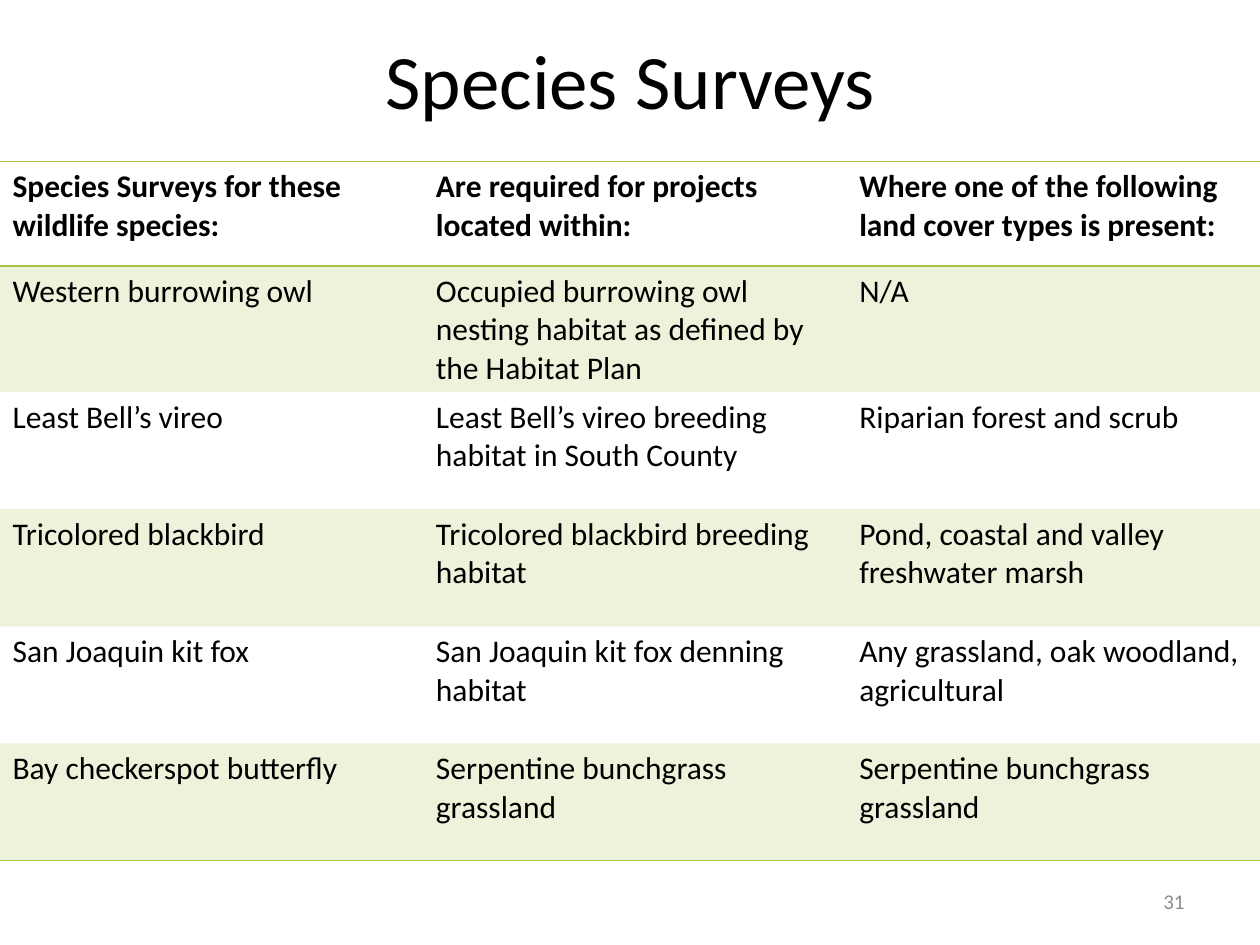
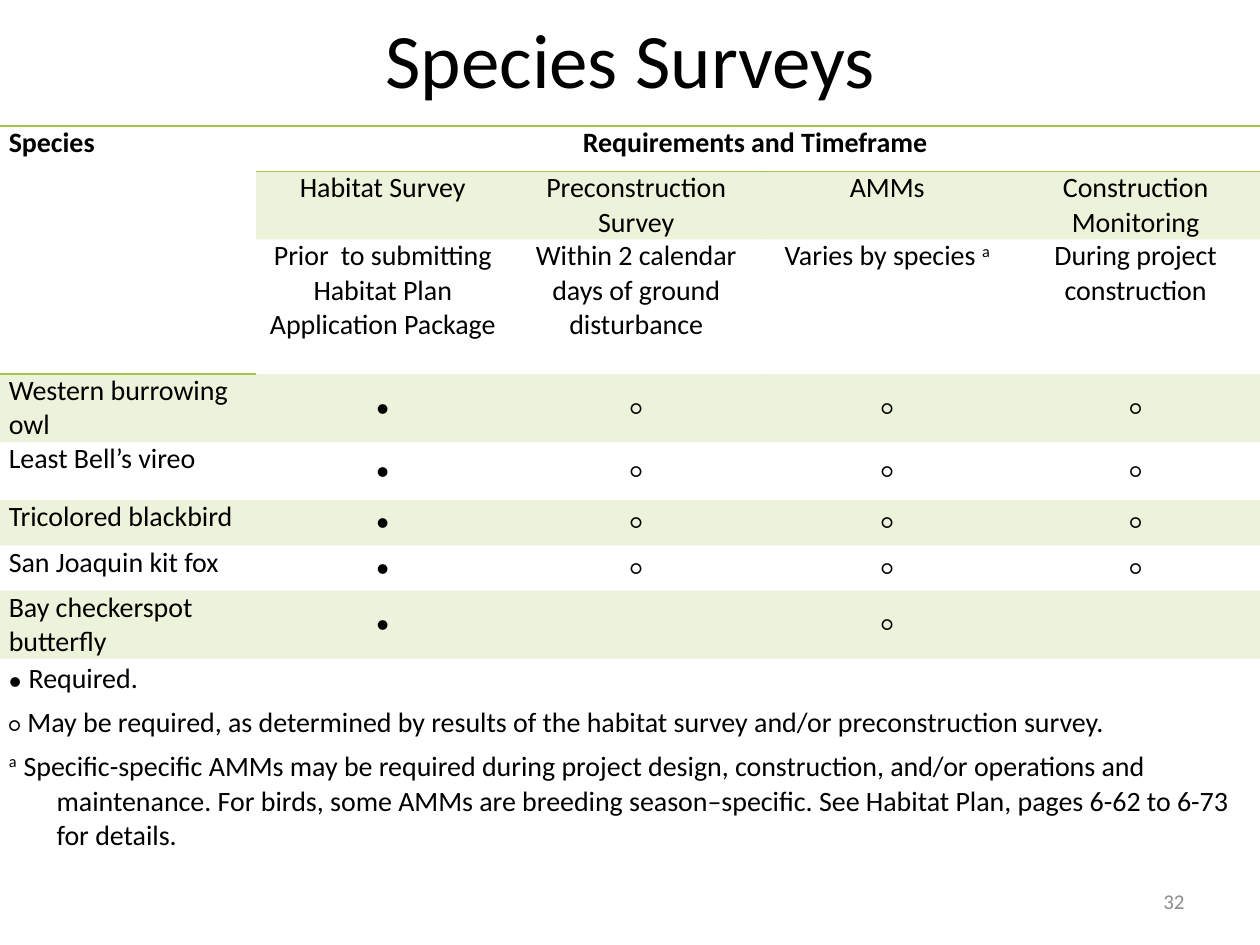
from lxml import etree
from pptx import Presentation
from pptx import util as u
from pptx.dml.color import RGBColor
from pptx.enum import text as t
from pptx.oxml.ns import qn

FONT, INK, GREY, GREEN = "Calibri", "000000", "8C8C8C", "A5C249"
WIDE, HIGH = u.Inches(10), u.Inches(7.5)
PLAIN = "{2D5ABB26-0587-4C30-8999-92F81FD0307C}"
DOT, RING = "●", "○"
LEFT, MID, RIGHT = t.PP_ALIGN.LEFT, t.PP_ALIGN.CENTER, t.PP_ALIGN.RIGHT


def hue(code):
    return RGBColor.from_string(code)


def area(x, y, w, h):
    """Turn percentages of the slide into left, top, width, height."""
    return [int(side * part / 100)
            for side, part in zip((WIDE, HIGH, WIDE, HIGH), (x, y, w, h))]


def split(total, parts):
    return [int(total * part / sum(parts)) for part in parts]


def style(font, size, color=INK, bold=False):
    font.name, font.size, font.bold = FONT, u.Pt(size), bold
    font.color.rgb = hue(color)


def write(par, runs, align=LEFT, gap=0, bold=False):
    """Fill a paragraph from (text, size) or (text, size, baseline) runs."""
    par.alignment = align
    par.space_before = par.space_after = u.Pt(gap)
    for words, size, *base in runs:
        run = par.add_run()
        run.text = words
        style(run.font, size, bold=bold)
        if base:
            run.font._element.set("baseline", str(base[0] * 1000))


def shade(cell):
    cell.fill.solid()
    cell.fill.fore_color.rgb = hue(GREEN)
    tint = cell._tc.tcPr.find(".//" + qn("a:srgbClr"))
    etree.SubElement(tint, qn("a:alpha"), val="20000")


def rule(cell, *sides):
    """Draw green lines on the given sides, top ("T") before bottom ("B")."""
    props = cell._tc.get_or_add_tcPr()
    for spot, side in enumerate(sides):
        line = etree.Element(qn("a:ln" + side), w=str(u.Pt(1)))
        fill = etree.SubElement(line, qn("a:solidFill"))
        etree.SubElement(fill, qn("a:srgbClr"), val=GREEN)
        props.insert(spot, line)


def grid(slide, box, cols, rows):
    """Add an unstyled table with columns and rows in the given ratios."""
    table = slide.shapes.add_table(len(rows), len(cols), *box).table
    table.first_row = table.horz_banding = False
    table._tbl.tblPr.find(qn("a:tableStyleId")).text = PLAIN
    for col, size in zip(table.columns, split(box[2], cols)):
        col.width = size
    for row, size in zip(table.rows, split(box[3], rows)):
        row.height = size
    return table


def page(deck, number, depth):
    """Add a slide with its title, depth percent high, and its number."""
    slide = deck.slides.add_slide(deck.slide_layouts[5])
    title = slide.shapes.title
    title.left, title.top, title.width, title.height = area(10.6, 0, 78.9, depth)
    title.text_frame.text = "Species Surveys"
    title.text_frame.vertical_anchor = t.MSO_ANCHOR.MIDDLE
    head = title.text_frame.paragraphs[0]
    head.alignment = MID
    style(head.font, 44)

    frame = slide.shapes.add_textbox(*area(71.7, 92.67, 23.3, 5.33)).text_frame
    frame.word_wrap = True
    frame.vertical_anchor = t.MSO_ANCHOR.MIDDLE
    frame.text = str(number)
    foot = frame.paragraphs[0]
    foot.alignment = RIGHT
    style(foot.font, 12, GREY)
    return slide


def places(slide, box):
    data = [
        ("Species Surveys for these wildlife species:",
         "Are required for projects located within:",
         "Where one of the following land cover types is present:"),
        ("Western burrowing owl",
         "Occupied burrowing owl nesting habitat as defined by the Habitat Plan",
         "N/A"),
        ("Least Bell’s vireo",
         "Least Bell’s vireo breeding habitat in South County",
         "Riparian forest and scrub"),
        ("Tricolored blackbird", "Tricolored blackbird breeding habitat",
         "Pond, coastal and valley freshwater marsh"),
        ("San Joaquin kit fox", "San Joaquin kit fox denning habitat",
         "Any grassland, oak woodland, agricultural"),
        ("Bay checkerspot butterfly", "Serpentine bunchgrass grassland",
         "Serpentine bunchgrass grassland"),
    ]
    last = len(data) - 1
    table = grid(slide, box, [1] * 3, [0.83] + [0.93] * last)
    for r, line in enumerate(data):
        for c, words in enumerate(line):
            cell = table.cell(r, c)
            write(cell.text_frame.paragraphs[0], [(words, 18)], bold=r == 0)
            if r % 2:
                shade(cell)
            if r == 0:
                rule(cell, "T", "B")
            elif r == last:
                rule(cell, "B")


def legend(frame):
    notes = [
        ((DOT, 12), "Required."),
        ((RING, 12), "May be required, as determined by results of the habitat "
         "survey and/or preconstruction survey."),
        (("a", 16, 30), "Specific-specific AMMs may be required during project "
         "design, construction, and/or operations and maintenance. For birds, "
         "some AMMs are breeding season–specific. See Habitat Plan, pages 6-62 "
         "to 6-73 for details."),
    ]
    for i, (mark, words) in enumerate(notes):
        par = frame.add_paragraph() if i else frame.paragraphs[0]
        props = par._p.get_or_add_pPr()
        props.set("marL", str(u.Inches(0.38)))
        props.set("indent", str(u.Inches(-0.38)))
        write(par, [mark, (" ", 18), (words, 16)], gap=1.5)
        if i == 0:
            par.space_before = u.Pt(0)


def timing(slide, box):
    heads = ["Habitat Survey", "Preconstruction Survey", "AMMs",
             "Construction Monitoring"]
    times = [
        [("Prior", 16), (" ", 14),
         (" to submitting Habitat Plan Application Package", 16)],
        [("Within 2 calendar days of ground disturbance", 16)],
        [("Varies by species ", 16), ("a", 16, 30)],
        [("During project construction", 16)],
    ]
    usual = [DOT, RING, RING, RING]
    needs = {
        "Western burrowing owl": usual,
        "Least Bell’s vireo": usual,
        "Tricolored blackbird": usual,
        "San Joaquin kit fox": usual,
        "Bay checkerspot butterfly": [DOT, "", RING, ""],
    }
    table = grid(slide, box, [2.03, 2.01, 2.01, 1.97, 1.97],
                 [0.36, 0.54, 1.07, 0.54, 0.46, 0.36, 0.36, 0.54, 2.27])
    for cell in table.iter_cells():
        cell.margin_left = cell.margin_right = u.Inches(0.07)
        cell.margin_top = cell.margin_bottom = 0

    def put(r, c, runs, align=MID, bold=False):
        par = table.cell(r, c).text_frame.paragraphs[0]
        write(par, runs, align, 1.5, bold)

    table.cell(0, 0).merge(table.cell(2, 0))
    table.cell(0, 1).merge(table.cell(0, 4))
    table.cell(8, 0).merge(table.cell(8, 4))
    put(0, 0, [("Species", 16)], LEFT, True)
    put(0, 1, [("Requirements and Timeframe", 16), (" ", 14)], bold=True)
    for c in range(5):
        rule(table.cell(0, c), "T", "B")
    for c, (head, time) in enumerate(zip(heads, times), 1):
        put(1, c, [(head, 16)])
        put(2, c, time)
        shade(table.cell(1, c))
    for r, (name, marks) in enumerate(needs.items(), 3):
        put(r, 0, [(name, 16)], LEFT)
        for c, mark in enumerate(marks, 1):
            put(r, c, [(mark, 12)])
            table.cell(r, c).vertical_anchor = t.MSO_ANCHOR.MIDDLE
        if r % 2:
            for c in range(5):
                shade(table.cell(r, c))
    legend(table.cell(8, 0).text_frame)


def main():
    deck = Presentation()
    deck.slide_width, deck.slide_height = WIDE, HIGH
    places(page(deck, 31, 16.67), area(0, 17.07, 100.8, 73.07))
    timing(page(deck, 32, 12.27), area(0, 13.33, 100, 86.67))
    deck.save("out.pptx")


if __name__ == "__main__":
    main()
